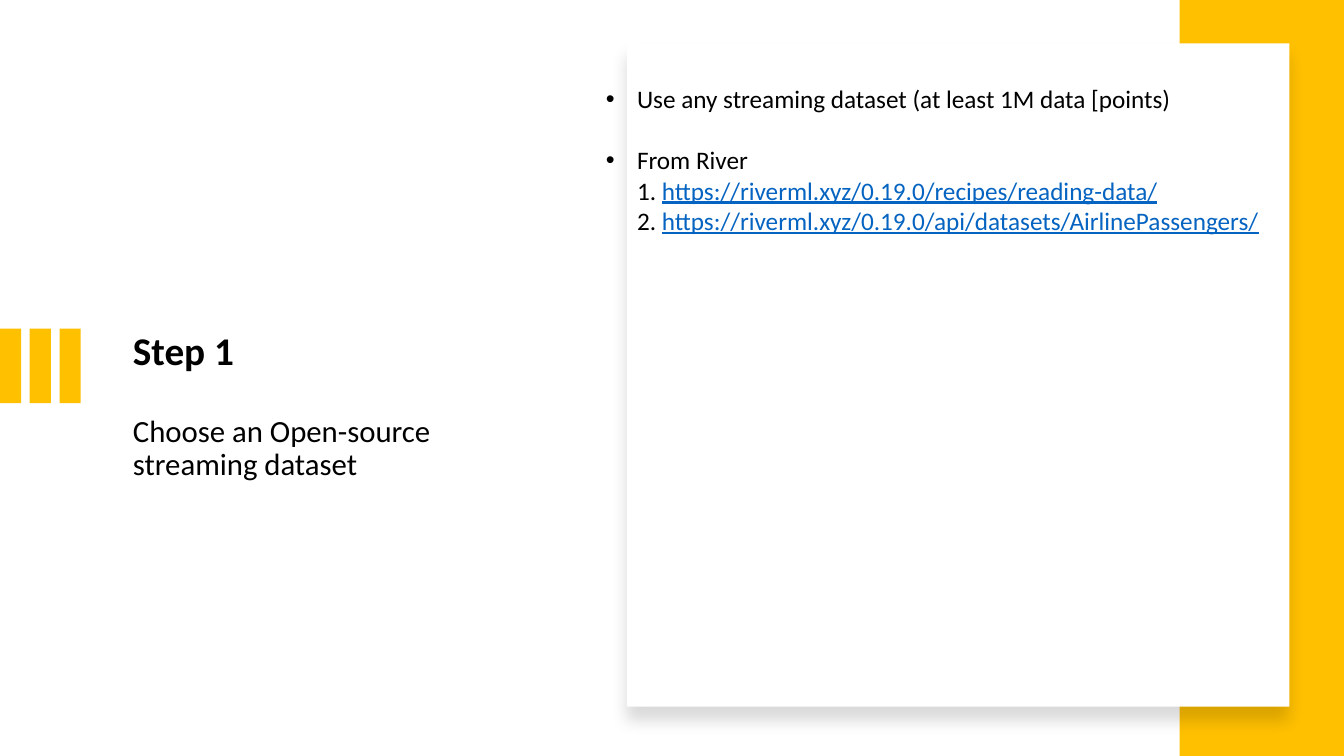
from lxml import etree
from pptx import Presentation
from pptx.dml.color import RGBColor
from pptx.enum import shapes, text
from pptx.oxml import ns
from pptx.util import Inches, Pt

AMBER = RGBColor(0xFF, 0xC0, 0x00)
WHITE = RGBColor(0xFF, 0xFF, 0xFF)
BLACK = RGBColor(0x00, 0x00, 0x00)
LINK_BLUE = RGBColor(0x05, 0x63, 0xC1)


class SlideBuilder:
    font_name = "Calibri"

    def __init__(self, page):
        self.page = page

    def rectangle(self, left, top, width, height, color):
        shape = self.page.shapes.add_shape(
            shapes.MSO_SHAPE.RECTANGLE,
            Inches(left), Inches(top), Inches(width), Inches(height),
        )
        shape.shadow.inherit = False
        shape.fill.solid()
        shape.fill.fore_color.rgb = color
        shape.line.fill.background()
        return shape

    def card(self, left, top, width, height):
        shape = self.rectangle(left, top, width, height, WHITE)
        effects = shape._element.spPr.find(ns.qn("a:effectLst"))
        shadow = etree.SubElement(
            effects, ns.qn("a:outerShdw"),
            blurRad=str(Pt(11)), dist=str(Pt(10)), dir="5400000",
            algn="t", rotWithShape="0",
        )
        color = etree.SubElement(shadow, ns.qn("a:srgbClr"), val=str(BLACK))
        etree.SubElement(color, ns.qn("a:alpha"), val="15000")

    def text_box(self, left, top, width, height):
        box = self.page.shapes.add_textbox(
            Inches(left), Inches(top), Inches(width), Inches(height)
        )
        box.text_frame.word_wrap = True
        box.text_frame.vertical_anchor = text.MSO_ANCHOR.TOP
        return box.text_frame

    def paragraph(self, frame, lines, size, bold=False, bullet=None,
                  line_spacing=1.0, space_after=0):
        first = frame.paragraphs[0]
        para = first if not first.runs else frame.add_paragraph()
        para.line_spacing = line_spacing
        para.space_after = Pt(space_after)
        if bullet:
            properties = para._p.get_or_add_pPr()
            properties.set("marL", str(Inches(0.31)))
            properties.set("indent", str(Inches(-0.31)))
            etree.SubElement(properties, ns.qn("a:buFont"), typeface="Arial")
            etree.SubElement(properties, ns.qn("a:buChar"), char=bullet)
        para.font.name = self.font_name
        para.font.size = Pt(size)
        para.font.bold = bold
        para.font.color.rgb = BLACK
        for index, (label, address) in enumerate(lines):
            if index:
                para.add_line_break()
            para.add_run().text = label
            if address:
                span = para.add_run()
                span.text = address
                span.font.color.rgb = LINK_BLUE
                span.font.underline = True


def main():
    deck = Presentation()
    deck.slide_width = Inches(13.33)
    deck.slide_height = Inches(7.5)
    builder = SlideBuilder(deck.slides.add_slide(deck.slide_layouts[6]))

    heading = builder.text_box(1.22, 3.24, 4.41, 3.77)
    builder.paragraph(heading, [("Step 1", None)], 28, bold=True,
                      line_spacing=0.9, space_after=30)
    builder.paragraph(heading, [("Choose an Open-source streaming dataset", None)],
                      22, line_spacing=0.9, space_after=6)

    for index in range(3):
        builder.rectangle(index * 0.295, 3.26, 0.21, 0.74, AMBER)
    builder.rectangle(11.7, 0, 1.63, 7.5, AMBER)
    builder.card(6.22, 0.43, 6.57, 6.58)

    sources = builder.text_box(5.91, 0.78, 6.75, 1.92)
    builder.paragraph(
        sources,
        [("Use any streaming dataset (at least 1M data [points)", None)],
        18, bullet="•", space_after=22,
    )
    builder.paragraph(
        sources,
        [
            ("From River", None),
            ("1. ", "https://riverml.xyz/0.19.0/recipes/reading-data/"),
            ("2. ", "https://riverml.xyz/0.19.0/api/datasets/AirlinePassengers/"),
        ],
        18, bullet="•",
    )

    deck.save("out.pptx")


if __name__ == "__main__":
    main()
